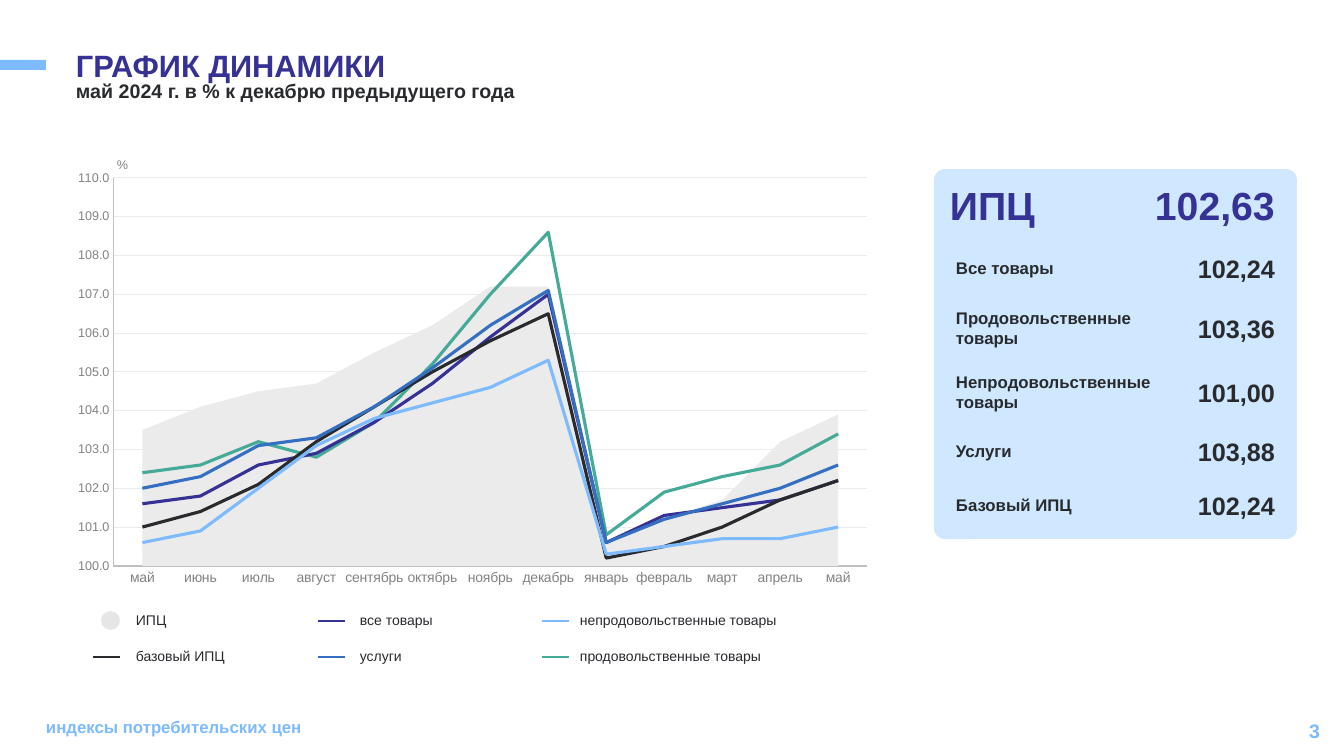
from lxml import etree
from pptx import Presentation
from pptx.chart.data import CategoryChartData
from pptx.dml.color import RGBColor
from pptx.enum.chart import XL_CHART_TYPE as ChartType, XL_MARKER_STYLE as Marker, XL_TICK_MARK as TickMark
from pptx.enum.shapes import MSO_CONNECTOR as Connector, MSO_SHAPE as Shape
from pptx.enum.text import MSO_ANCHOR as Anchor, PP_ALIGN as Align
from pptx.oxml import parse_xml
from pptx.oxml.ns import nsdecls, qn
from pptx.util import Emu, Pt

EMU_PER_PX = 914400 / 100.8
FONT = "Arial"
INDIGO, SKY, INK, BLUE, GREEN = "363194", "7DBBFC", "282A2E", "346FC2", "46AA98"
CARD, GRAY, AXIS, GRID, AREA, DOT = "CFE8FF", "838383", "BFBFBF", "EBEBEB", "EBEBEB", "E6E6E6"

# text, left, vertical centre, width, format
HEADINGS = [
    ("ГРАФИК ДИНАМИКИ", 76, 65, 874, dict(size=22, color=INDIGO)),
    ("май 2024 г. в % к декабрю предыдущего года", 76, 91, 874, dict(size=14)),
    ("индексы потребительских цен", 46, 727, 1000, dict(size=12, color=SKY)),
    ("3", 1038, 731, 282, dict(size=14, color=SKY, align=Align.RIGHT)),
    ("ИПЦ", 950, 205, 120, dict(size=28, color=INDIGO)),
    ("102,63", 1155, 205, 140, dict(size=28, color=INDIGO)),
]
# label, value, vertical centre
CARD_ROWS = [
    ("Все товары", "102,24", 268),
    ("Продовольственные товары", "103,36", 328),
    ("Непродовольственные товары", "101,00", 392),
    ("Услуги", "103,88", 451),
    ("Базовый ИПЦ", "102,24", 505),
]
MONTHS = ["май", "июнь", "июль", "август", "сентябрь", "октябрь", "ноябрь",
          "декабрь", "январь", "февраль", "март", "апрель", "май"]
SERIES = [
    ("ИПЦ", AREA, [103.5, 104.1, 104.5, 104.7, 105.5, 106.2, 107.2, 107.2,
                   100.6, 101.2, 101.7, 103.2, 103.9]),
    ("продовольственные товары", GREEN, [102.4, 102.6, 103.2, 102.8, 103.7, 105.2, 107, 108.6,
                                         100.8, 101.9, 102.3, 102.6, 103.4]),
    ("все товары", INDIGO, [101.6, 101.8, 102.6, 102.9, 103.7, 104.7, 105.9, 107,
                            100.6, 101.3, 101.5, 101.7, 102.2]),
    ("базовый ИПЦ", INK, [101, 101.4, 102.1, 103.2, 104.1, 105, 105.8, 106.5,
                          100.2, 100.5, 101, 101.7, 102.2]),
    ("непродовольственные товары", SKY, [100.6, 100.9, 102, 103.1, 103.8, 104.2, 104.6, 105.3,
                                         100.3, 100.5, 100.7, 100.7, 101]),
    ("услуги", BLUE, [102, 102.3, 103.1, 103.3, 104.1, 105.1, 106.2, 107.1,
                      100.6, 101.2, 101.6, 102, 102.6]),
]
LEGEND_ROWS = [
    (621, ["ИПЦ", "все товары", "непродовольственные товары"]),
    (657, ["базовый ИПЦ", "услуги", "продовольственные товары"]),
]
LEGEND_COLUMNS = [(93, 136), (318, 360), (542, 580)]  # key left, label left
KEY_WIDTH = 27
CHART_BOX = (78, 158, 845, 456)
PLOT_BOX = (111, 178, 756, 388)


def px(value):
    return Emu(round(value * EMU_PER_PX))


def rgb(color):
    return RGBColor.from_string(color)


def set_font(font, size, color, bold=False):
    for name, value in dict(name=FONT, size=Pt(size), bold=bold).items():
        setattr(font, name, value)
    font.color.rgb = rgb(color)


def set_line(line, color, width):
    line.color.rgb = rgb(color)
    line.width = Pt(width)


def add_text(slide, text, left, centre, width, size, color=INK, bold=True, align=Align.LEFT):
    """Put text in a box without margins, centred vertically on a given height."""
    height = 44
    box = slide.shapes.add_textbox(px(left), px(centre - height / 2), px(width), px(height))
    frame = box.text_frame
    settings = dict(word_wrap=True, vertical_anchor=Anchor.MIDDLE,
                    margin_left=0, margin_top=0, margin_right=0, margin_bottom=0)
    for name, value in settings.items():
        setattr(frame, name, value)
    paragraph = frame.paragraphs[0]
    paragraph.alignment = align
    run = paragraph.add_run()
    run.text = text
    set_font(run.font, size, color, bold)


def add_filled(slide, preset, color, *box):
    shape = slide.shapes.add_shape(preset, *map(px, box))
    shape.shadow.inherit = False
    shape.fill.solid()
    shape.fill.fore_color.rgb = rgb(color)
    shape.line.fill.background()
    return shape


def add_key_line(slide, left, top, color):
    connector = slide.shapes.add_connector(
        Connector.STRAIGHT, px(left), px(top), px(left + KEY_WIDTH), px(top))
    set_line(connector.line, color, 2)
    etree.SubElement(connector._element.spPr, qn("a:effectLst"))


def move_to_line_plot(chart):
    """Keep the first series as an area and turn the others into lines on the same axes."""
    area = chart.plots[0]._element
    line = parse_xml(f'<c:lineChart {nsdecls("c")}><c:grouping val="standard"/>'
                     '<c:varyColors val="0"/><c:marker val="1"/></c:lineChart>')
    marker = line.find(qn("c:marker"))
    for series in area.findall(qn("c:ser"))[1:]:
        marker.addprevious(series)
    for axis in area.findall(qn("c:axId")):
        etree.SubElement(line, qn("c:axId")).set("val", axis.get("val"))
    area.addnext(line)


def place_plot(chart):
    plot_area = chart._chartSpace.find(".//" + qn("c:plotArea"))
    for layout in plot_area.findall(qn("c:layout")):
        plot_area.remove(layout)
    left, top, width, height = CHART_BOX
    inner = dict(x=(PLOT_BOX[0] - left) / width, y=(PLOT_BOX[1] - top) / height,
                 w=PLOT_BOX[2] / width, h=PLOT_BOX[3] / height)
    modes = '<c:layoutTarget val="inner"/><c:xMode val="edge"/><c:yMode val="edge"/>'
    sizes = "".join(f'<c:{name} val="{value:.4f}"/>' for name, value in inner.items())
    plot_area.insert(0, parse_xml(f'<c:layout {nsdecls("c")}><c:manualLayout>{modes}{sizes}'
                                  '</c:manualLayout></c:layout>'))
    plot_area.find(".//" + qn("c:crossBetween")).set("val", "between")


def add_index_chart(slide):
    data = CategoryChartData(number_format="0.0")
    data.categories = MONTHS
    for name, _, values in SERIES:
        data.add_series(name, values)
    chart = slide.shapes.add_chart(ChartType.AREA, *map(px, CHART_BOX), data).chart
    chart.has_legend = chart.has_title = False
    set_font(chart.font, 10, INK)
    chart.plots[0].vary_by_categories = False
    move_to_line_plot(chart)
    place_plot(chart)

    area_plot, line_plot = chart.plots
    area_fill = area_plot.series[0].format.fill
    area_fill.solid()
    area_fill.fore_color.rgb = rgb(SERIES[0][1])
    for series, (_, color, _) in zip(line_plot.series, SERIES[1:]):
        set_line(series.format.line, color, 2.25)
        series.marker.style = Marker.NONE
        series.smooth = False

    for axis, size in ((chart.category_axis, 10), (chart.value_axis, 9)):
        axis.major_tick_mark = axis.minor_tick_mark = TickMark.NONE
        set_font(axis.tick_labels.font, size, GRAY)
        set_line(axis.format.line, AXIS, 1)
    chart.category_axis.has_major_gridlines = False
    scale = dict(minimum_scale=100, maximum_scale=110, major_unit=1, has_major_gridlines=True)
    for name, value in scale.items():
        setattr(chart.value_axis, name, value)
    set_line(chart.value_axis.major_gridlines.format.line, GRID, 0.75)
    labels = chart.value_axis.tick_labels
    labels.number_format, labels.number_format_is_linked = "#,##0.0", False


def add_legend(slide):
    colors = {name: color for name, color, _ in SERIES}
    for top, names in LEGEND_ROWS:
        for name, (key_left, label_left) in zip(names, LEGEND_COLUMNS):
            if name == SERIES[0][0]:
                add_filled(slide, Shape.OVAL, DOT, key_left + 8, top - 10, 19, 19)
            else:
                add_key_line(slide, key_left, top, colors[name])
            add_text(slide, name, label_left, top - 1, 220, size=10, bold=False)


def main():
    presentation = Presentation()
    presentation.slide_width, presentation.slide_height = px(1344), px(756)
    slide = presentation.slides.add_slide(presentation.slide_layouts[6])
    add_filled(slide, Shape.RECTANGLE, SKY, 0, 60, 46, 10)
    card = add_filled(slide, Shape.ROUNDED_RECTANGLE, CARD, 934, 169, 363, 370)
    card.adjustments[0] = 0.03
    add_index_chart(slide)
    add_legend(slide)
    add_text(slide, "%", 117, 164, 30, size=9, color=GRAY, bold=False)
    for text, left, centre, width, style in HEADINGS:
        add_text(slide, text, left, centre, width, **style)
    for label, value, centre in CARD_ROWS:
        add_text(slide, label, 956, centre, 210, size=12)
        add_text(slide, value, 1198, centre, 95, size=18)
    presentation.save("out.pptx")


if __name__ == "__main__":
    main()
